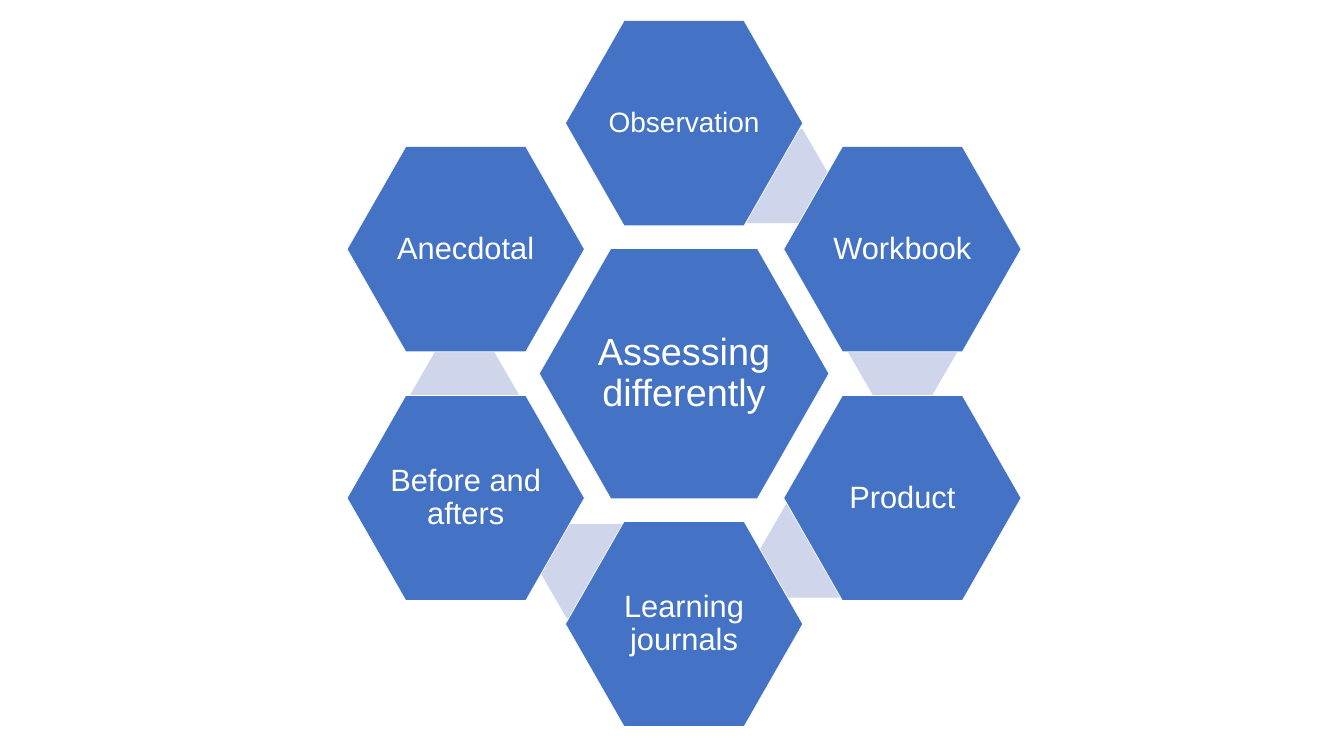
import pptx
import pptx.util
import pptx.dml.color
import pptx.enum.shapes
import pptx.enum.text

Cm, Pt = pptx.util.Cm, pptx.util.Pt
RGBColor = pptx.dml.color.RGBColor

BLUE = RGBColor(0x44, 0x72, 0xC4)
PALE_BLUE = RGBColor(0xCF, 0xD5, 0xEA)
WHITE = RGBColor(0xFF, 0xFF, 0xFF)

# Lengths in centimetres, offsets from the middle of the ring
CENTER_X, CENTER_Y = 34.47, 18.83
COLUMN, NEAR_ROW, FAR_ROW = 11, 6.27, 12.62
HUB_SIZE = (14.6, 12.62)
TOPIC_SIZE = (11.96, 10.34)
LINK_SIZE = (5.51, 4.75)

# Topic, font size, offset, offset of the link to the next topic
TOPICS = [
    ("Observation", 40, (0, -FAR_ROW), (4.58, -9.96)),
    ("Workbook", 44, (COLUMN, -NEAR_ROW), (11.01, -1.09)),
    ("Product", 44, (COLUMN, NEAR_ROW), (6.54, 8.92)),
    ("Learning journals", 44, (0, FAR_ROW), (-4.53, 9.96)),
    ("Before and afters", 44, (-COLUMN, NEAR_ROW), (-11.06, 1.09)),
    ("Anecdotal", 44, (-COLUMN, -NEAR_ROW), None),
]


class HexagonSlide:
    """Holds the style and the current slide."""

    font_name = "Arial"

    def __init__(self, presentation):
        self.slide = presentation.slides.add_slide(presentation.slide_layouts[6])

    def hexagon(self, offset, size, color, adjustment):
        width, height = size
        shape = self.slide.shapes.add_shape(
            pptx.enum.shapes.MSO_SHAPE.HEXAGON,
            Cm(CENTER_X + offset[0] - width / 2),
            Cm(CENTER_Y + offset[1] - height / 2),
            Cm(width), Cm(height))
        shape.adjustments[0] = adjustment
        shape.shadow.inherit = False
        shape.fill.solid()
        shape.fill.fore_color.rgb = color
        return shape

    def link(self, offset):
        shape = self.hexagon(offset, LINK_SIZE, PALE_BLUE, 0.289)
        shape.line.fill.background()

    def topic(self, text, font_size, offset, size, inset=0.15):
        shape = self.hexagon(offset, size, BLUE, 0.286)
        shape.line.color.rgb = WHITE
        shape.line.width = Pt(1)
        frame = shape.text_frame
        frame.word_wrap = True
        frame.vertical_anchor = pptx.enum.text.MSO_ANCHOR.MIDDLE
        frame.margin_left = frame.margin_right = Cm(inset)
        frame.margin_top = frame.margin_bottom = Cm(inset)
        paragraph = frame.paragraphs[0]
        paragraph.text = text
        paragraph.alignment = pptx.enum.text.PP_ALIGN.CENTER
        paragraph.line_spacing = 0.9
        paragraph.font.name = self.font_name
        paragraph.font.size = Pt(font_size)
        paragraph.font.color.rgb = WHITE


def main():
    presentation = pptx.Presentation()
    presentation.slide_width = Cm(67.72)
    presentation.slide_height = Cm(38.1)
    page = HexagonSlide(presentation)

    # Hub
    page.topic("Assessing differently", 54, (0, 0), HUB_SIZE, inset=0.18)

    # Ring of topics, each link lying behind the topics it joins
    for text, font_size, offset, link_offset in TOPICS:
        if link_offset:
            page.link(link_offset)
        page.topic(text, font_size, offset, TOPIC_SIZE)

    presentation.save("out.pptx")


if __name__ == "__main__":
    main()
